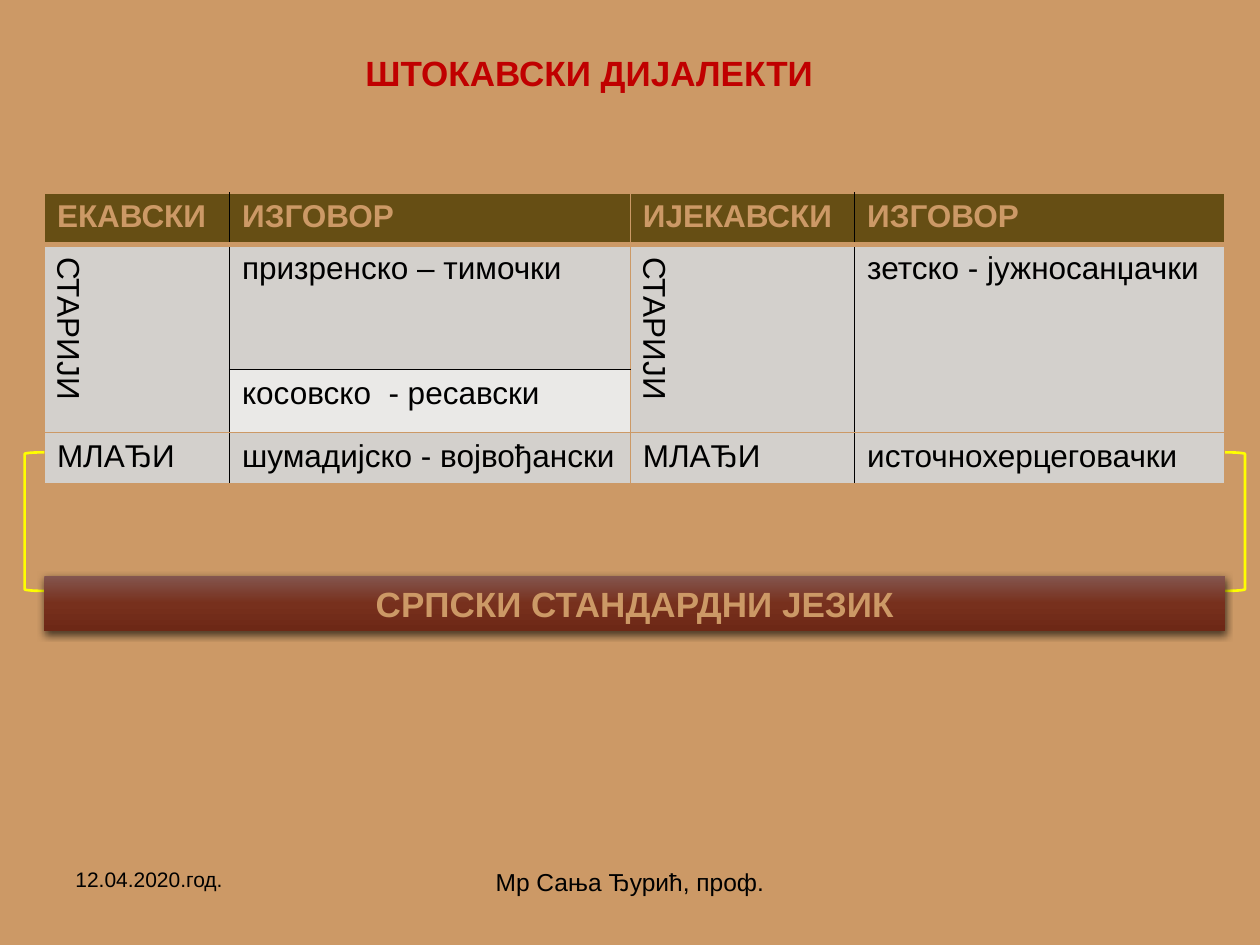
"""Build a slide with a table of Shtokavian dialects and the standard language below it."""
from lxml import etree
from pptx import Presentation
from pptx.dml.color import RGBColor
from pptx.enum.shapes import MSO_SHAPE
from pptx.enum.text import MSO_ANCHOR, MSO_AUTO_SIZE, PP_ALIGN
from pptx.oxml import parse_xml
from pptx.oxml.ns import nsdecls, qn
from pptx.util import Pt

LEFT, CENTER = PP_ALIGN.LEFT, PP_ALIGN.CENTER
TOP, MIDDLE = MSO_ANCHOR.TOP, MSO_ANCHOR.MIDDLE
GROW = MSO_AUTO_SIZE.SHAPE_TO_FIT_TEXT
RECT = MSO_SHAPE.RECTANGLE
BRACKETS = MSO_SHAPE.LEFT_BRACKET, MSO_SHAPE.RIGHT_BRACKET

COLORS = {
    "sand": "CC9966", "red": "C00000", "black": "000000", "header": "664E14",
    "band": "D3D0CC", "light": "EAE9E7", "yellow": "FFFF00",
}
FONT = "Arial"
TITLE = "ШТОКАВСКИ ДИЈАЛЕКТИ"
STANDARD = "СРПСКИ СТАНДАРДНИ ЈЕЗИК"
ROWS = [
    ["ЕКАВСКИ", "ИЗГОВОР", "ИЈЕКАВСКИ", "ИЗГОВОР"],
    ["СТАРИЈИ", "призренско – тимочки", "СТАРИЈИ", "зетско - јужносанџачки"],
    ["", "косовско  - ресавски", "", ""],
    ["МЛАЂИ", "шумадијско - војвођански", "МЛАЂИ", "источнохерцеговачки"],
]
FOOTERS = [
    ("12.04.2020.год.", 36, 168, 12, LEFT),
    ("Мр Сања Ђурић, проф.", 246, 228, 14, CENTER),
]
COL_WIDTHS = [105.8, 229, 128.2, 211.7]
ROW_HEIGHTS = [29.5, 71.5, 36, 29.2]
TABLE_LEFT, TABLE_TOP = 25.4, 110.2
TABLE_WIDTH = sum(COL_WIDTHS)
BRACKET_TOP, BRACKET_WIDTH, BRACKET_HEIGHT = 258.5, 11.3, 79.2
BAR_TOP, BAR_HEIGHT = 329, 31.5
BAR_STOPS = [(0, "84564F"), (50, "77301D"), (100, "6D2816")]


def rgb(name):
    return RGBColor.from_string(COLORS[name])


def box(*lengths):
    return [Pt(v) for v in lengths]


def set_text(tf, text, size, color, bold=False, align=LEFT, anchor=TOP):
    tf.text = text
    tf.word_wrap = True
    tf.vertical_anchor = anchor
    p = tf.paragraphs[0]
    p.alignment = align
    for r in p.runs:
        r.font.name, r.font.size, r.font.bold = FONT, Pt(size), bold
        r.font.color.rgb = rgb(color)


def set_border(cell, side, color, width):
    ln = etree.SubElement(cell._tc.get_or_add_tcPr(), qn(f"a:ln{side}"), w=str(Pt(width)))
    fill = etree.SubElement(ln, qn("a:solidFill"))
    etree.SubElement(fill, qn("a:srgbClr"), val=COLORS[color])


def format_cell(cell, row, col):
    text = ROWS[row][col]
    header = row == 0
    set_text(cell.text_frame, text, 18, "sand" if header else "black", header)
    set_border(cell, "L", "black" if col % 2 else "sand", 1)
    set_border(cell, "R", "sand" if col % 2 else "black", 1)
    set_border(cell, "T", "black" if (row, col) == (2, 1) else "sand", 3 if row == 1 else 1)
    set_border(cell, "B", "black" if (row, col) == (1, 1) else "sand", 3 if header else 1)
    cell.fill.solid()
    shade = "header" if header else "light" if (row, col) == (2, 1) else "band"
    cell.fill.fore_color.rgb = rgb(shade)
    if row == 1 and col in (0, 2):
        cell._tc.get_or_add_tcPr().set("vert", "vert")


def add_dialect_table(s):
    table = s.shapes.add_table(
        len(ROWS), len(COL_WIDTHS),
        *box(TABLE_LEFT, TABLE_TOP, TABLE_WIDTH, sum(ROW_HEIGHTS))).table
    for column, width in zip(table.columns, COL_WIDTHS):
        column.width = Pt(width)
    for row, height in zip(table.rows, ROW_HEIGHTS):
        row.height = Pt(height)
    for row in range(len(ROWS)):
        for col in range(len(COL_WIDTHS)):
            format_cell(table.cell(row, col), row, col)
    for col in (0, 2, 3):
        table.cell(1, col).merge(table.cell(2, col))


def add_brackets(s):
    lefts = TABLE_LEFT - BRACKET_WIDTH, TABLE_LEFT + TABLE_WIDTH
    for kind, left in zip(BRACKETS, lefts):
        sp = s.shapes.add_shape(kind, *box(left, BRACKET_TOP, BRACKET_WIDTH, BRACKET_HEIGHT))
        sp.shadow.inherit = False
        sp.fill.background()
        sp.line.color.rgb = rgb("yellow")
        sp.line.width = Pt(1.5)


def add_standard_bar(s):
    sp = s.shapes.add_shape(RECT, *box(TABLE_LEFT, BAR_TOP, TABLE_WIDTH, BAR_HEIGHT))
    sp.line.fill.background()
    sp.shadow.inherit = False
    stops = "".join(f'<a:gs pos="{pos * 1000}"><a:srgbClr val="{color}"/></a:gs>'
                    for pos, color in BAR_STOPS)
    gradient = parse_xml(f'<a:gradFill {nsdecls("a")}><a:gsLst>{stops}</a:gsLst>'
                         '<a:lin ang="5400000" scaled="0"/></a:gradFill>')
    spPr = sp._element.spPr
    spPr.find(qn("a:prstGeom")).addnext(gradient)
    spPr.find(qn("a:effectLst")).append(parse_xml(
        f'<a:outerShdw {nsdecls("a")} blurRad="{Pt(4.5)}" dist="{Pt(1.5)}" dir="5400000" '
        f'algn="ctr" rotWithShape="0"><a:srgbClr val="{COLORS["black"]}">'
        '<a:alpha val="63000"/></a:srgbClr></a:outerShdw>'))
    set_text(sp.text_frame, STANDARD, 20, "sand", True, CENTER, MIDDLE)
    sp.text_frame.auto_size = GROW


def main():
    prs = Presentation()
    prs.slide_width, prs.slide_height = box(720, 540)
    s = prs.slides.add_slide(prs.slide_layouts[5])
    s.background.fill.solid()
    s.background.fill.fore_color.rgb = rgb("sand")
    title = s.shapes.title
    title.left, title.top, title.width, title.height = box(201.6, 26, 300, 31.5)
    set_text(title.text_frame, TITLE, 20, "red", True)
    title.text_frame.auto_size = GROW
    add_dialect_table(s)
    add_brackets(s)
    add_standard_bar(s)
    for text, left, width, size, align in FOOTERS:
        sp = s.shapes.add_textbox(*box(left, 491.8, width, 37.4))
        set_text(sp.text_frame, text, size, "black", align=align)
    prs.save("out.pptx")


if __name__ == "__main__":
    main()
